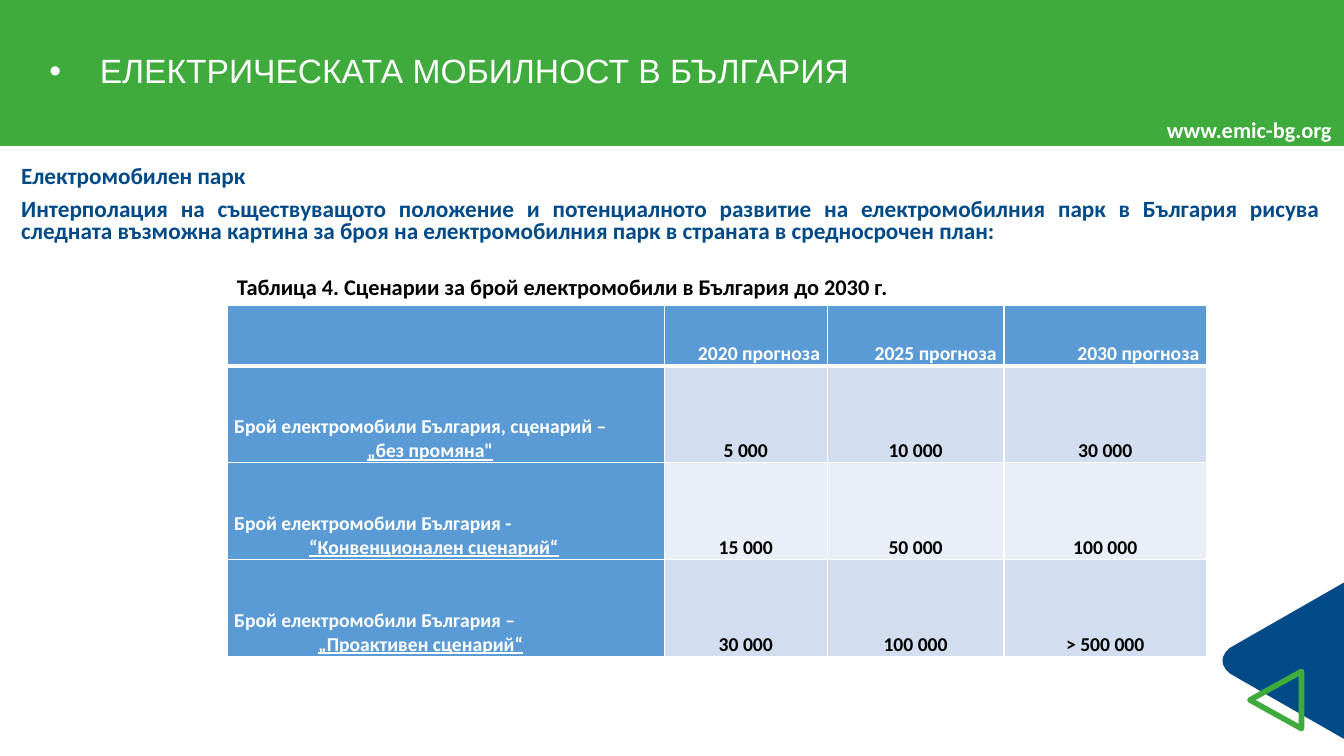
from lxml.etree import SubElement
from pptx import Presentation
from pptx.dml.color import RGBColor
from pptx.enum.shapes import MSO_SHAPE
from pptx.enum.text import MSO_ANCHOR, MSO_AUTO_SIZE, PP_ALIGN
from pptx.oxml.ns import qn
from pptx.util import Cm, Pt

TITLE = "ЕЛЕКТРИЧЕСКАТА МОБИЛНОСТ В БЪЛГАРИЯ"
SITE = "www.emic-bg.org"
BODY = [
    "Електромобилен парк",
    "Интерполация на съществуващото положение и потенциалното развитие на "
    "електромобилния парк в България рисува следната възможна картина за броя "
    "на електромобилния парк в страната в средносрочен план:",
]
CAPTION = "Таблица 4. Сценарии за брой електромобили в България до 2030 г."
YEARS = ["2020 прогноза", "2025 прогноза", "2030 прогноза"]
SCENARIOS = [
    ("Брой електромобили България, сценарий –", "„без промяна\"", 3.35,
     ["5 000", "10 000", "30 000"]),
    ("Брой електромобили България -", "“Конвенционален сценарий“", 1.89,
     ["15 000", "50 000", "100 000"]),
    ("Брой електромобили България –", "„Проактивен сценарий“", 2.12,
     ["30 000", "100 000", "> 500 000"]),
]
COLUMN_WIDTHS = [11.02, 4.11, 4.45, 5.11]
HEADER_HEIGHT, ROW_HEIGHT = 1.52, 2.44
SLIDE_WIDTH, SLIDE_HEIGHT, BAND_HEIGHT = 33.87, 19.05, 3.68
TABLE_LEFT, TABLE_TOP = 5.72, 7.7
CORNER = [(33.87, 14.68), (30.99, 16.33), (30.89, 16.43), (30.82, 16.56),
          (30.81, 16.65), (30.82, 16.74), (30.89, 16.87), (30.99, 16.97),
          (33.87, 18.62)]
TRIANGLE = [(32.8, 16.92), (31.5, 17.64), (32.8, 18.36)]

WHITE = RGBColor(0xFF, 0xFF, 0xFF)
BLACK = RGBColor(0x00, 0x00, 0x00)
GREEN = RGBColor(0x3F, 0xAB, 0x3C)
NAVY = RGBColor(0x00, 0x4A, 0x87)
BLUE = RGBColor(0x5B, 0x9B, 0xD5)
PALE = RGBColor(0xD2, 0xDE, 0xEF)
PALER = RGBColor(0xEA, 0xEF, 0xF7)


def write(frame, text, first=True, size=14, color=WHITE, font="Calibri", bold=True,
          underline=False, align=PP_ALIGN.LEFT, line=1.0, after=0, margin=0,
          indent=0, bullet=None):
    para = frame.paragraphs[0] if first else frame.add_paragraph()
    para.alignment = align
    para.line_spacing = line
    para.space_before, para.space_after = Pt(0), Pt(after)
    properties = para._p.get_or_add_pPr()
    properties.set("marL", str(Cm(margin)))
    properties.set("indent", str(Cm(indent)))
    if bullet:
        SubElement(properties, qn("a:buFont"), typeface="Arial")
        SubElement(properties, qn("a:buChar"), char=bullet)
    else:
        SubElement(properties, qn("a:buNone"))
    span = para.add_run()
    span.text = text
    span.font.size, span.font.name = Pt(size), font
    span.font.bold, span.font.underline = bold, underline
    span.font.color.rgb = color


def place(shape, left, top, width, height):
    shape.left, shape.top = Cm(left), Cm(top)
    shape.width, shape.height = Cm(width), Cm(height)


def add_outline(shapes, points):
    builder = shapes.build_freeform(Cm(points[0][0]), Cm(points[0][1]))
    builder.add_line_segments([(Cm(x), Cm(y)) for x, y in points[1:]])
    shape = builder.convert_to_shape()
    shape.shadow.inherit = False
    return shape


def add_label(shapes, text, left, top, width, wrap, **style):
    box = shapes.add_textbox(Cm(left), Cm(top), Cm(width), Cm(0.94))
    box.text_frame.word_wrap = wrap
    write(box.text_frame, text, size=16, **style)


def format_cell(cell, fill, top, bottom):
    properties = cell._tc.get_or_add_tcPr()
    for side, width in (("L", 1), ("R", 1), ("T", top), ("B", bottom)):
        border = SubElement(properties, qn(f"a:ln{side}"), w=str(Pt(width)))
        paint = SubElement(border, qn("a:solidFill"))
        SubElement(paint, qn("a:srgbClr"), val=str(WHITE))
    cell.fill.solid()
    cell.fill.fore_color.rgb = fill
    cell.vertical_anchor = MSO_ANCHOR.BOTTOM
    cell.margin_left = cell.margin_right = Cm(0.18)
    cell.margin_top = cell.margin_bottom = 0


def add_scenarios(shapes):
    heights = [HEADER_HEIGHT] + [ROW_HEIGHT] * len(SCENARIOS)
    table = shapes.add_table(len(heights), len(COLUMN_WIDTHS), Cm(TABLE_LEFT),
                             Cm(TABLE_TOP), Cm(sum(COLUMN_WIDTHS)),
                             Cm(sum(heights))).table
    for column, width in zip(table.columns, COLUMN_WIDTHS):
        column.width = Cm(width)
    for index, height in enumerate(heights):
        table.rows[index].height = Cm(height)
        for position in range(len(COLUMN_WIDTHS)):
            values_fill = PALE if index % 2 else PALER
            fill = BLUE if index == 0 or position == 0 else values_fill
            format_cell(table.cell(index, position), fill,
                        3 if index == 1 else 1, 3 if index == 0 else 1)
    for position, year in enumerate(YEARS, 1):
        write(table.cell(0, position).text_frame, year, align=PP_ALIGN.RIGHT)
    for index, (label, scenario, margin, values) in enumerate(SCENARIOS, 1):
        frame = table.cell(index, 0).text_frame
        write(frame, label)
        write(frame, scenario, first=False, underline=True, margin=margin)
        for position, value in enumerate(values, 1):
            write(table.cell(index, position).text_frame, value, color=BLACK,
                  align=PP_ALIGN.CENTER)


def main():
    deck = Presentation()
    deck.slide_width, deck.slide_height = Cm(SLIDE_WIDTH), Cm(SLIDE_HEIGHT)
    page = deck.slides.add_slide(deck.slide_layouts[1])
    shapes = page.shapes
    title, body = shapes.title, page.placeholders[1]

    corner = add_outline(shapes, CORNER)
    corner.fill.solid()
    corner.fill.fore_color.rgb = NAVY
    corner.line.fill.background()

    band = shapes.add_shape(MSO_SHAPE.RECTANGLE, 0, 0, Cm(SLIDE_WIDTH), Cm(BAND_HEIGHT))
    band.shadow.inherit = False
    band.fill.solid()
    band.fill.fore_color.rgb = GREEN
    band.line.fill.background()

    triangle = add_outline(shapes, TRIANGLE)
    triangle.fill.background()
    triangle.line.color.rgb = GREEN
    triangle.line.width = Pt(4)
    for shape in (corner, band, triangle):
        title.element.addprevious(shape.element)

    place(title, 0, 0, SLIDE_WIDTH, BAND_HEIGHT)
    title.text_frame.vertical_anchor = MSO_ANCHOR.MIDDLE
    title.text_frame.auto_size = MSO_AUTO_SIZE.NONE
    write(title.text_frame, TITLE, size=24, font="Arial", bold=False, line=0.9,
          margin=2.26, indent=-1.27, bullet="•")

    place(body, 0.28, 4.06, 33.2, 2.69)
    body.text_frame.auto_size = MSO_AUTO_SIZE.NONE
    for index, text in enumerate(BODY):
        write(body.text_frame, text, first=index == 0, size=16.6, color=NAVY,
              align=PP_ALIGN.JUSTIFY, line=0.8, after=8)

    add_label(shapes, SITE, 29.16, 2.79, 4.72, False)
    add_label(shapes, CAPTION, TABLE_LEFT, 6.76, 27.74, True, color=BLACK,
              align=PP_ALIGN.JUSTIFY)
    add_scenarios(shapes)
    deck.save("out.pptx")


if __name__ == "__main__":
    main()
